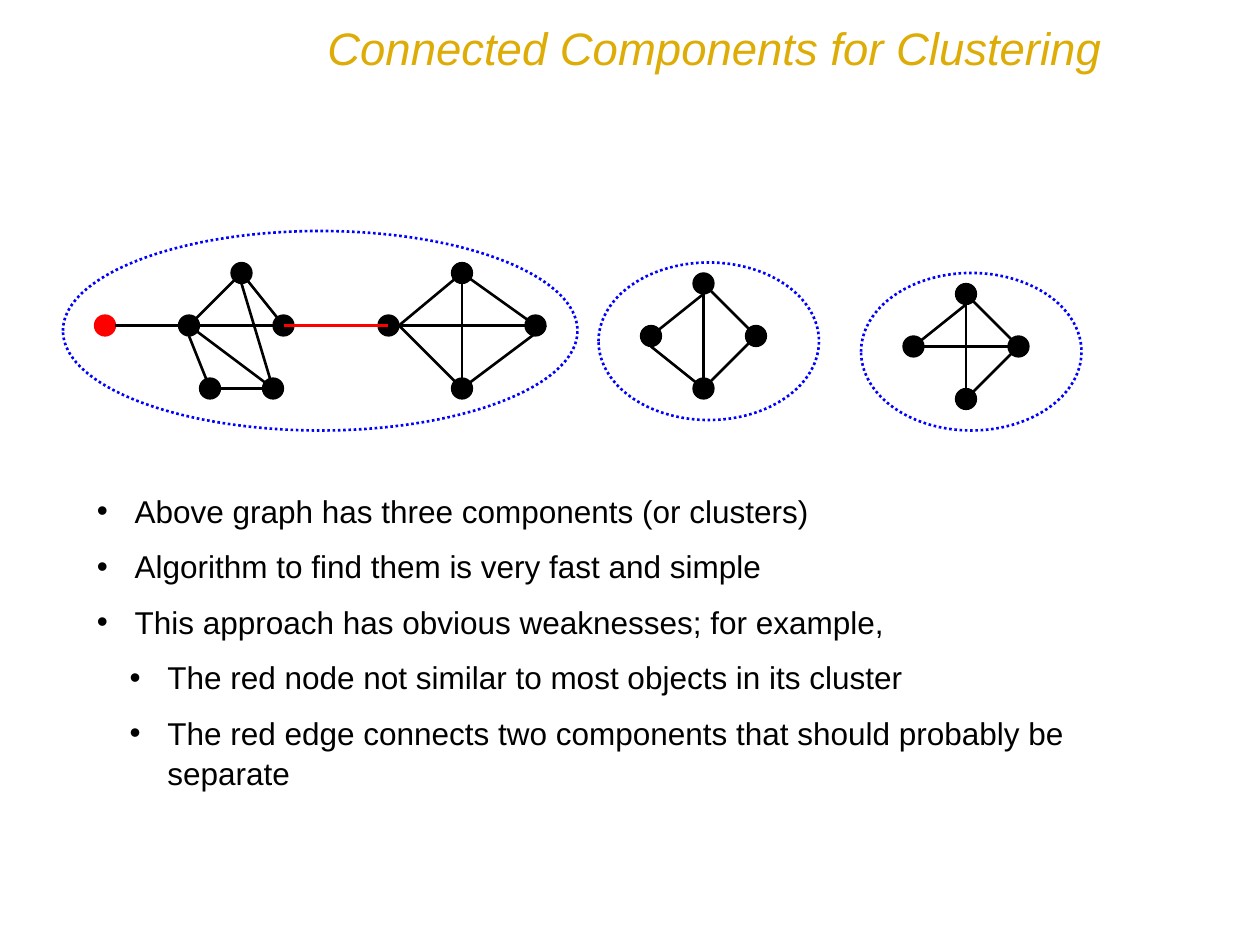
from lxml import etree
from pptx import Presentation
from pptx.dml.color import RGBColor
from pptx.enum.dml import MSO_LINE
from pptx.enum.shapes import MSO_CONNECTOR, MSO_SHAPE
from pptx.enum.text import MSO_ANCHOR
from pptx.oxml.ns import qn
from pptx.util import Inches, Pt

OVAL = MSO_SHAPE.OVAL
STRAIGHT = MSO_CONNECTOR.STRAIGHT
DOTTED = MSO_LINE.ROUND_DOT
MIDDLE = MSO_ANCHOR.MIDDLE

COLORS = {"title": "DEAC06", "black": "000000", "red": "FF0000", "blue": "0000FF"}
COLORS = {name: RGBColor.from_string(value) for name, value in COLORS.items()}

# The graph lies on a grid of twelve units to the inch.
UNIT = Inches(1) / 12

# Node centres
NODES = [
    (18, 31), (23, 26), (27, 31), (20, 37), (26, 37),
    (37, 31), (44, 26), (44, 37), (51, 31),
    (62, 32), (67, 27), (67, 37), (72, 32),
    (87, 33), (92, 28), (92, 38), (97, 33),
]
RED_NODE = (10, 31)

# Edge ends: x1, y1, x2, y2
EDGES = [
    (11, 31, 18, 31), (18, 32, 20, 37), (20, 37, 26, 37), (23, 26, 27, 31),
    (23, 26, 18, 31), (18, 31, 27, 31), (23, 27, 26, 37), (26, 37, 18, 31),
    (38, 31, 44, 26), (38, 31, 44, 37), (44, 26, 44, 37),
    (37, 31, 51, 31), (44, 26, 51, 31), (52, 31, 44, 37),
    (67, 28, 62, 32), (62, 33, 67, 37), (67, 27, 72, 32),
    (72, 32, 67, 37), (67, 27, 67, 37),
    (92, 29, 87, 33), (92, 28, 97, 33), (97, 33, 92, 38),
    (92, 28, 92, 38), (88, 33, 97, 33),
]
RED_EDGE = (27, 31, 37, 31)

# Cluster outlines: left, top, width, height
CLUSTERS = [(6, 22, 49, 19), (57, 25, 21, 15), (82, 26, 21, 15)]

BULLETS = [
    (0, "Above graph has three components (or clusters)"),
    (0, "Algorithm to find them is very fast and simple"),
    (0, "This approach has obvious weaknesses; for example,"),
    (1, "The red node not similar to most objects in its cluster"),
    (1, "The red edge connects two components that should probably be separate"),
]


def grid(*values):
    return [round(v * UNIT) for v in values]


def add_text_box(left, top, width, height):
    sp = s.shapes.add_textbox(Inches(left), Inches(top), Inches(width), Inches(height))
    tf = sp.text_frame
    tf.word_wrap = True
    tf.vertical_anchor = MIDDLE
    return tf


prs = Presentation()
prs.slide_width, prs.slide_height = Inches(10), Inches(7.5)
s = prs.slides.add_slide(prs.slide_layouts[6])

tf = add_text_box(2.5, 0, 7.06, 0.75)
tf.text = "Connected Components for Clustering"
font = tf.paragraphs[0].runs[0].font
font.name, font.size, font.italic = "Arial", Pt(26), True
font.color.rgb = COLORS["title"]

for x, y in [RED_NODE] + NODES:
    color = COLORS["red" if (x, y) == RED_NODE else "black"]
    node = s.shapes.add_shape(OVAL, *grid(x - 1, y - 1, 2, 2))
    node.shadow.inherit = False
    node.fill.solid()
    node.fill.fore_color.rgb = color
    node.line.color.rgb = color
    node.line.width = Pt(0.75)

for ends in EDGES + [RED_EDGE]:
    edge = s.shapes.add_connector(STRAIGHT, *grid(*ends))
    edge.line.color.rgb = COLORS["red" if ends == RED_EDGE else "black"]
    edge.line.width = Pt(1.5)
    etree.SubElement(edge._element.spPr, qn("a:effectLst"))

for box in CLUSTERS:
    cluster = s.shapes.add_shape(OVAL, *grid(*box))
    cluster.shadow.inherit = False
    cluster.fill.background()
    cluster.line.color.rgb = COLORS["blue"]
    cluster.line.width = Pt(1.5)
    cluster.line.dash_style = DOTTED

tf = add_text_box(0.67, 3.83, 8.75, 2.51)
for i, (level, text) in enumerate(BULLETS):
    p = tf.paragraphs[0] if i == 0 else tf.add_paragraph()
    p.text = text
    p.level = level
    p.line_spacing = 1.05
    p.space_before = Pt(9 if i else 0)
    pPr = p._p.get_or_add_pPr()
    pPr.set("marL", str(Inches(0.3 + 0.26 * level)))
    pPr.set("indent", str(Inches(-0.3)))
    etree.SubElement(pPr, qn("a:buFont"), typeface="Arial")
    etree.SubElement(pPr, qn("a:buChar"), char="•")
    font = p.runs[0].font
    font.name, font.size = "Arial", Pt(18)
    font.color.rgb = COLORS["black"]

prs.save("out.pptx")
